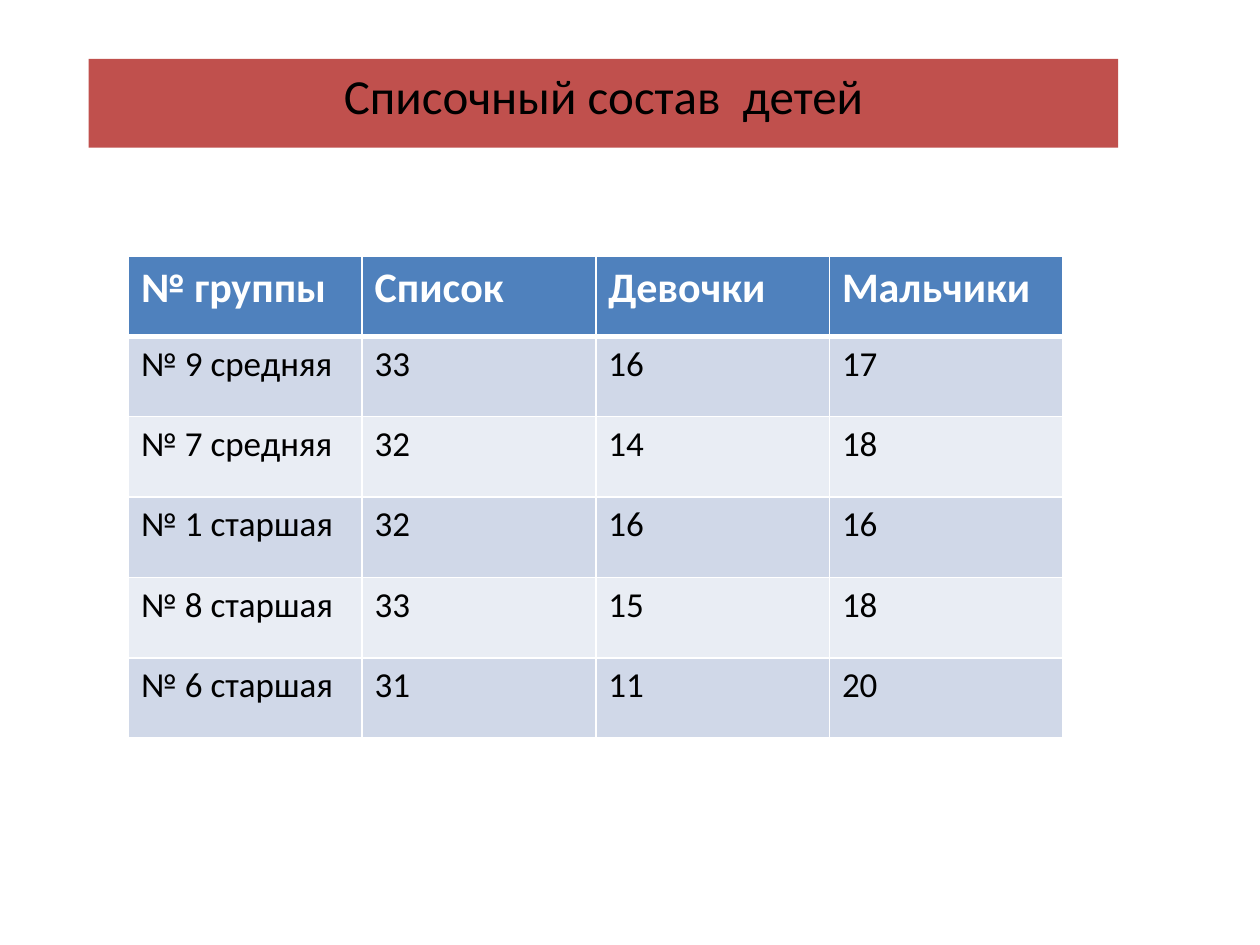
from dataclasses import dataclass

from lxml import etree
from pptx import Presentation
from pptx import util as u
from pptx.dml.color import RGBColor
from pptx.enum import shapes, text
from pptx.oxml import ns


@dataclass(frozen=True)
class Theme:
    font: str = "Calibri"
    banner: str = "C0504D"
    header: str = "4F81BD"
    bands: tuple[str, str] = ("D0D8E8", "E9EDF4")
    light: str = "FFFFFF"
    dark: str = "000000"
    title_size: int = 28
    header_size: int = 24
    body_size: int = 20
    thin: int = 1
    thick: int = 3


@dataclass(frozen=True)
class Group:
    name: str
    total: int
    girls: int
    boys: int

    def values(self) -> list[str]:
        return [self.name, str(self.total), str(self.girls), str(self.boys)]


THEME = Theme()
TITLE = "Списочный состав  детей"
HEADINGS = ["№ группы", "Список", "Девочки", "Мальчики"]
GROUPS = [
    Group("№ 9 средняя", 33, 16, 17),
    Group("№ 7 средняя", 32, 14, 18),
    Group("№ 1 старшая", 32, 16, 16),
    Group("№ 8 старшая", 33, 15, 18),
    Group("№ 6 старшая", 31, 11, 20),
]


def style_paragraph(p, size: int, color: str, bold: bool = False) -> None:
    p.font.name = THEME.font
    p.font.size = u.Pt(size)
    p.font.bold = bold
    p.font.color.rgb = RGBColor.from_string(color)


def set_borders(cell, top: int, bottom: int) -> None:
    tc_pr = cell._tc.get_or_add_tcPr()
    widths = {"lnL": THEME.thin, "lnR": THEME.thin, "lnT": top, "lnB": bottom}
    for tag, width in widths.items():
        ln = etree.SubElement(tc_pr, ns.qn(f"a:{tag}"), w=str(u.Pt(width)))
        fill = etree.SubElement(ln, ns.qn("a:solidFill"))
        etree.SubElement(fill, ns.qn("a:srgbClr"), val=THEME.light)


def add_banner(s) -> None:
    sp = s.shapes.add_shape(shapes.MSO_SHAPE.RECTANGLE,
                            u.Cm(1.79), u.Cm(1.19), u.Cm(20.75), u.Cm(1.79))
    sp.shadow.inherit = False
    sp.fill.solid()
    sp.fill.fore_color.rgb = RGBColor.from_string(THEME.banner)
    sp.line.fill.background()
    tf = sp.text_frame
    tf.word_wrap = True
    tf.vertical_anchor = text.MSO_ANCHOR.TOP
    p = tf.paragraphs[0]
    p.text = TITLE
    p.alignment = text.PP_ALIGN.CENTER
    style_paragraph(p, THEME.title_size, THEME.dark)


def add_group_table(s) -> None:
    rows = [HEADINGS] + [group.values() for group in GROUPS]
    table = s.shapes.add_table(len(rows), len(HEADINGS), u.Cm(2.59), u.Cm(5.16),
                               u.Cm(18.84), u.Cm(9.72)).table
    for i, row in enumerate(rows):
        is_header = i == 0
        fill = THEME.header if is_header else THEME.bands[(i - 1) % 2]
        size = THEME.header_size if is_header else THEME.body_size
        color = THEME.light if is_header else THEME.dark
        top = THEME.thick if i == 1 else THEME.thin
        bottom = THEME.thick if is_header else THEME.thin
        for j, value in enumerate(row):
            cell = table.cell(i, j)
            set_borders(cell, top, bottom)
            cell.fill.solid()
            cell.fill.fore_color.rgb = RGBColor.from_string(fill)
            p = cell.text_frame.paragraphs[0]
            p.text = value
            style_paragraph(p, size, color, is_header)


def main() -> None:
    prs = Presentation()
    prs.slide_width, prs.slide_height = u.Cm(25.4), u.Cm(19.05)
    s = prs.slides.add_slide(prs.slide_layouts[6])
    add_group_table(s)
    add_banner(s)
    prs.save("out.pptx")


if __name__ == "__main__":
    main()
